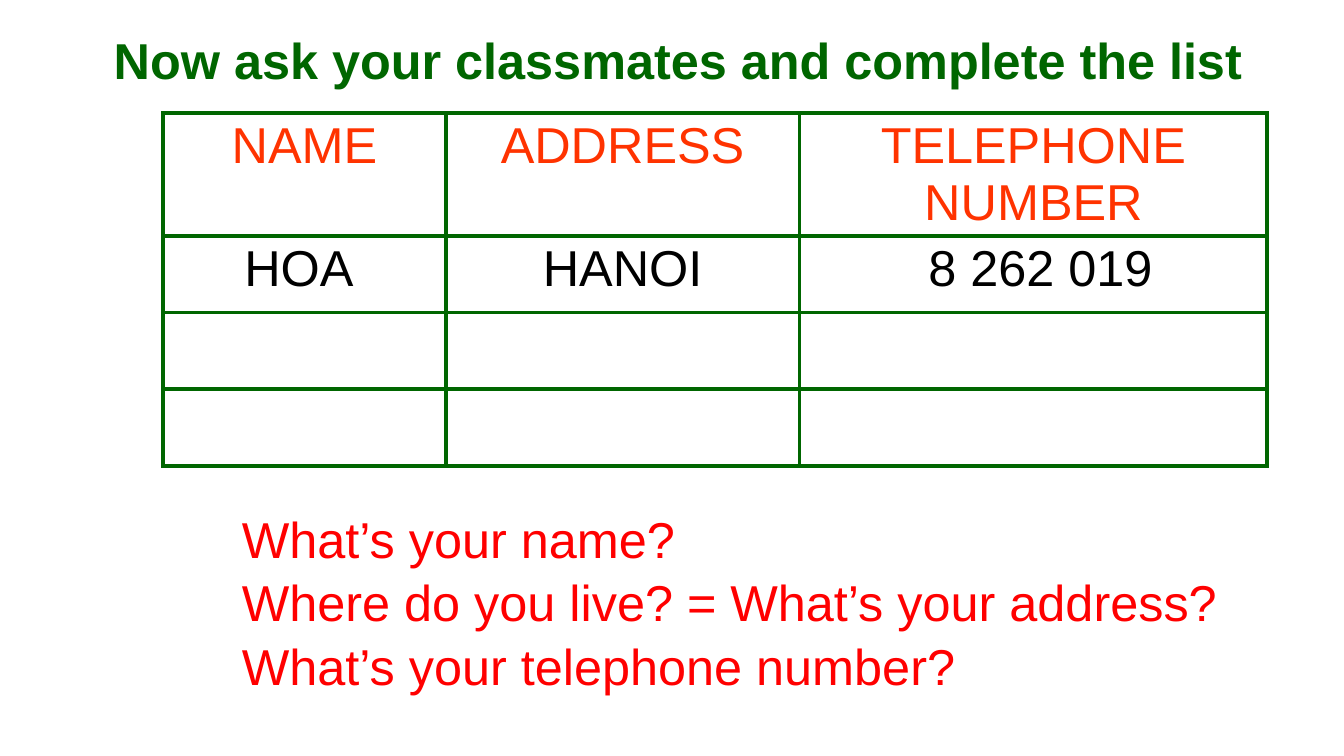
from dataclasses import dataclass

from pptx import Presentation
from pptx.dml.color import RGBColor
from pptx.enum.text import PP_ALIGN
from pptx.oxml import parse_xml
from pptx.oxml.ns import nsdecls
from pptx.util import Inches, Pt

CENTER = PP_ALIGN.CENTER
GREEN, ORANGE, RED, BLACK = "006600", "FF3300", "FF0000", "000000"
FONT = {"name": "Arial", "size": Pt(36)}
CELL_MARGINS = {
    "margin_left": Inches(0.13),
    "margin_right": Inches(0.13),
    "margin_top": Inches(0.05),
    "margin_bottom": Inches(0.05),
}
BORDER_SIDES = ("lnL", "lnR", "lnT", "lnB")
BORDER_WIDTH = Pt(3)


@dataclass
class TextBlock:
    left: float
    top: float
    width: float
    height: float
    lines: tuple[str, ...]
    color: str
    bold: bool = False


TEXT_BLOCKS = (
    TextBlock(1.03, 0.21, 12.3, 0.71,
              ("Now ask your classmates and complete the list",), GREEN, True),
    TextBlock(2.3, 4.96, 11, 1.92,
              ("What’s your name?",
               "Where do you live? = What’s your address?",
               "What’s your telephone number?"), RED),
)

COLUMN_WIDTHS = (2.8, 3.51, 4.64)
ROW_HEIGHTS = (1.11, 0.76, 0.76, 0.76)
CLASS_LIST = (
    ("NAME", "ADDRESS", "TELEPHONE NUMBER"),
    ("HOA ", "HANOI", " 8 262 019"),
    ("", "", ""),
    ("", "", ""),
)


def rgb(color: str) -> RGBColor:
    return RGBColor.from_string(color)


def apply_format(target, values: dict) -> None:
    for name, value in values.items():
        setattr(target, name, value)


def add_span(para, text: str, color: str, bold: bool = False) -> None:
    span = para.add_run()
    span.text = text
    apply_format(span.font, FONT | {"bold": bold})
    span.font.color.rgb = rgb(color)


def add_text_block(page, block: TextBlock) -> None:
    box = page.shapes.add_textbox(Inches(block.left), Inches(block.top),
                                  Inches(block.width), Inches(block.height))
    frame = box.text_frame
    frame.word_wrap = True
    for index, line in enumerate(block.lines):
        para = frame.add_paragraph() if index else frame.paragraphs[0]
        para.line_spacing = 1.05
        add_span(para, line, block.color, block.bold)


def add_borders(cell) -> None:
    properties = cell._tc.get_or_add_tcPr()
    for index, side in enumerate(BORDER_SIDES):
        properties.insert(index, parse_xml(
            f'<a:{side} {nsdecls("a")} w="{BORDER_WIDTH}"><a:solidFill>'
            f'<a:srgbClr val="{GREEN}"/></a:solidFill></a:{side}>'))


def add_class_list(page) -> None:
    frame = page.shapes.add_table(
        len(ROW_HEIGHTS), len(COLUMN_WIDTHS), Inches(1.62), Inches(1.12),
        Inches(sum(COLUMN_WIDTHS)), Inches(sum(ROW_HEIGHTS)))
    table = frame.table
    apply_format(table, {"first_row": False, "horz_banding": False})
    for column, width in zip(table.columns, COLUMN_WIDTHS):
        column.width = Inches(width)
    for index, (row, height, texts) in enumerate(
            zip(table.rows, ROW_HEIGHTS, CLASS_LIST)):
        row.height = Inches(height)
        for cell, text in zip(row.cells, texts):
            apply_format(cell, CELL_MARGINS)
            cell.fill.background()
            add_borders(cell)
            if text:
                para = cell.text_frame.paragraphs[0]
                para.alignment = CENTER
                add_span(para, text, BLACK if index else ORANGE)


def main() -> None:
    deck = Presentation()
    apply_format(deck, {"slide_width": Inches(13.33), "slide_height": Inches(7.5)})
    page = deck.slides.add_slide(deck.slide_layouts[6])

    # Table of classmates
    add_class_list(page)

    # Heading and questions
    for block in TEXT_BLOCKS:
        add_text_block(page, block)

    deck.save("out.pptx")


if __name__ == "__main__":
    main()
